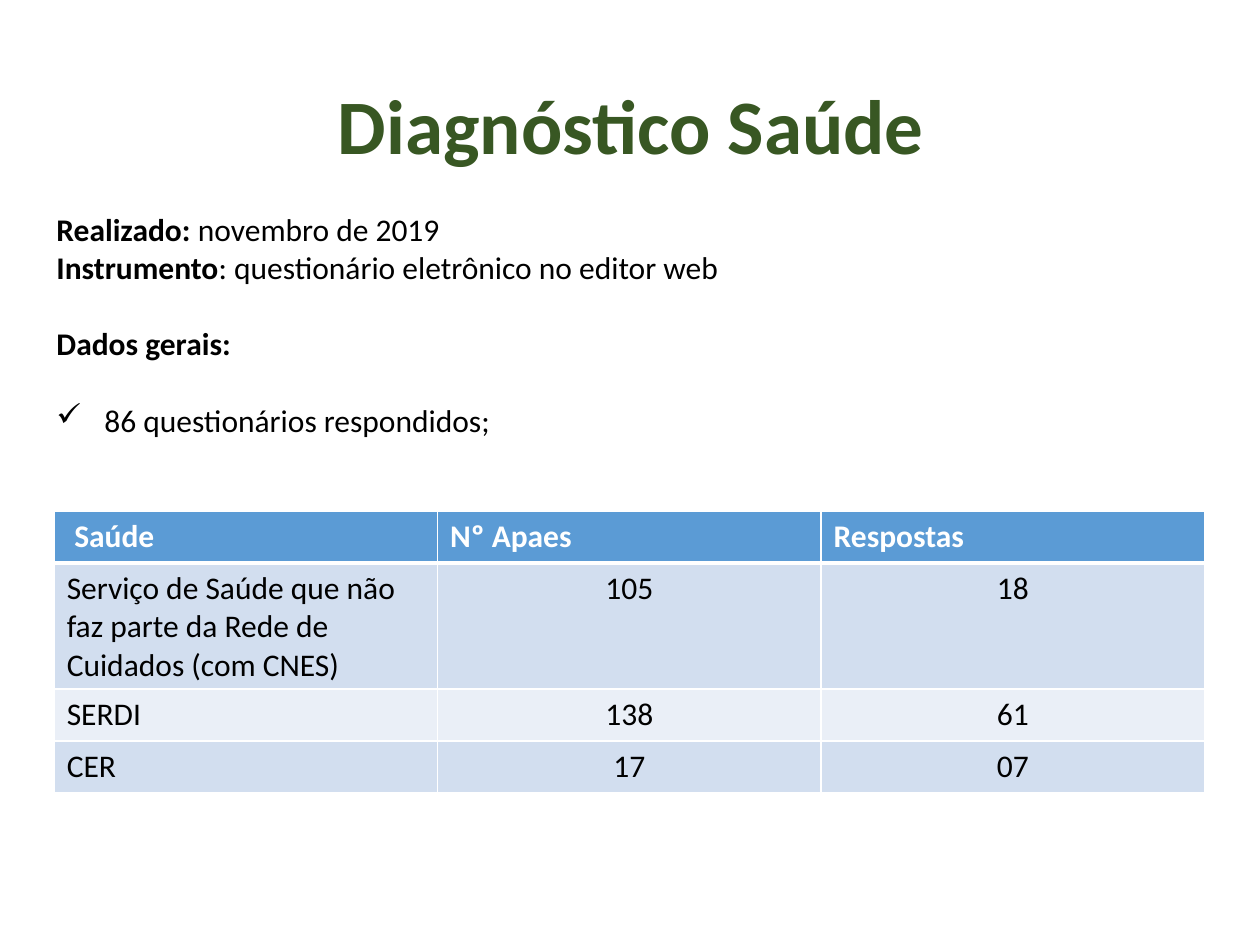
"""Build the health diagnosis slide with its survey summary and table."""
from lxml import etree
from pptx import Presentation
from pptx.dml.color import RGBColor
from pptx.enum.text import MSO_ANCHOR, PP_ALIGN
from pptx.oxml.ns import qn
from pptx.util import Inches, Pt

CENTER, JUSTIFY, LEFT = PP_ALIGN.CENTER, PP_ALIGN.JUSTIFY, PP_ALIGN.LEFT
MIDDLE = MSO_ANCHOR.MIDDLE
GREEN = RGBColor(0x38, 0x57, 0x23)
BLACK = RGBColor(0x00, 0x00, 0x00)
WHITE = RGBColor(0xFF, 0xFF, 0xFF)
BLUE = RGBColor(0x5B, 0x9B, 0xD5)
BANDS = [RGBColor(0xEA, 0xEF, 0xF7), RGBColor(0xD2, 0xDE, 0xEF)]


def add_text(p, text, size=18, color=BLACK, bold=False, align=LEFT):
    p.alignment = align
    r = p.add_run()
    r.text = text
    r.font.name = "Calibri"
    r.font.size = Pt(size)
    r.font.bold = bold
    r.font.color.rgb = color


def set_borders(cell, bottom):
    tc_pr = cell._tc.get_or_add_tcPr()
    widths = [("a:lnL", 1), ("a:lnR", 1), ("a:lnT", 1), ("a:lnB", bottom)]
    for i, (tag, width) in enumerate(widths):
        ln = etree.Element(qn(tag), w=str(Pt(width)))
        fill = etree.SubElement(ln, qn("a:solidFill"))
        etree.SubElement(fill, qn("a:srgbClr"), val=str(WHITE))
        tc_pr.insert(i, ln)


prs = Presentation()
prs.slide_width, prs.slide_height = Inches(10), Inches(7.5)
s = prs.slides.add_slide(prs.slide_layouts[6])

sp = s.shapes.add_textbox(Inches(0.69), Inches(0.4), Inches(8.64), Inches(1.26))
tf = sp.text_frame
tf.word_wrap = True
tf.vertical_anchor = MIDDLE
p = tf.paragraphs[0]
p.line_spacing = 0.9
add_text(p, "Diagnóstico Saúde", size=44, color=GREEN, bold=True, align=CENTER)

rows = [
    ["Saúde", "Nº Apaes", "Respostas"],
    ["Serviço de Saúde que não faz parte da Rede de Cuidados (com CNES)", "105", "18"],
    ["SERDI", "138", "61"],
    ["CER", "17", "07"],
]
heights = [0.41, 1.0, 0.41, 0.41]
table = s.shapes.add_table(len(rows), 3, Inches(0.43), Inches(4.06),
                           Inches(9.13), Inches(sum(heights))).table
for i, row in enumerate(rows):
    table.rows[i].height = Inches(heights[i])
    header = i == 0
    for j, text in enumerate(row):
        cell = table.cell(i, j)
        cell.fill.solid()
        cell.fill.fore_color.rgb = BLUE if header else BANDS[i % 2]
        set_borders(cell, bottom=3 if header else 1)
        add_text(cell.text_frame.paragraphs[0], text,
                 color=WHITE if header else BLACK, bold=header,
                 align=LEFT if header or j == 0 else CENTER)
table.cell(0, 0).margin_left = Inches(0.16)

summary = [
    (0, [("Realizado: ", True), ("novembro de 2019", False)]),
    (0, [("Instrumento", True), (": questionário eletrônico no editor web", False)]),
    (22, [("Dados gerais:", True)]),
    (22, [("86 questionários respondidos;", False)]),
]
sp = s.shapes.add_textbox(Inches(0.35), Inches(1.62), Inches(9.13), Inches(1.92))
tf = sp.text_frame
tf.word_wrap = True
for i, (gap, runs) in enumerate(summary):
    p = tf.add_paragraph() if i else tf.paragraphs[0]
    p.space_before = Pt(gap)
    for text, bold in runs:
        add_text(p, text, bold=bold, align=JUSTIFY)

p_pr = p._p.get_or_add_pPr()
p_pr.set("marL", str(Inches(0.38)))
p_pr.set("indent", str(-Inches(0.38)))
etree.SubElement(p_pr, qn("a:buChar"), char="✓")

prs.save("out.pptx")
